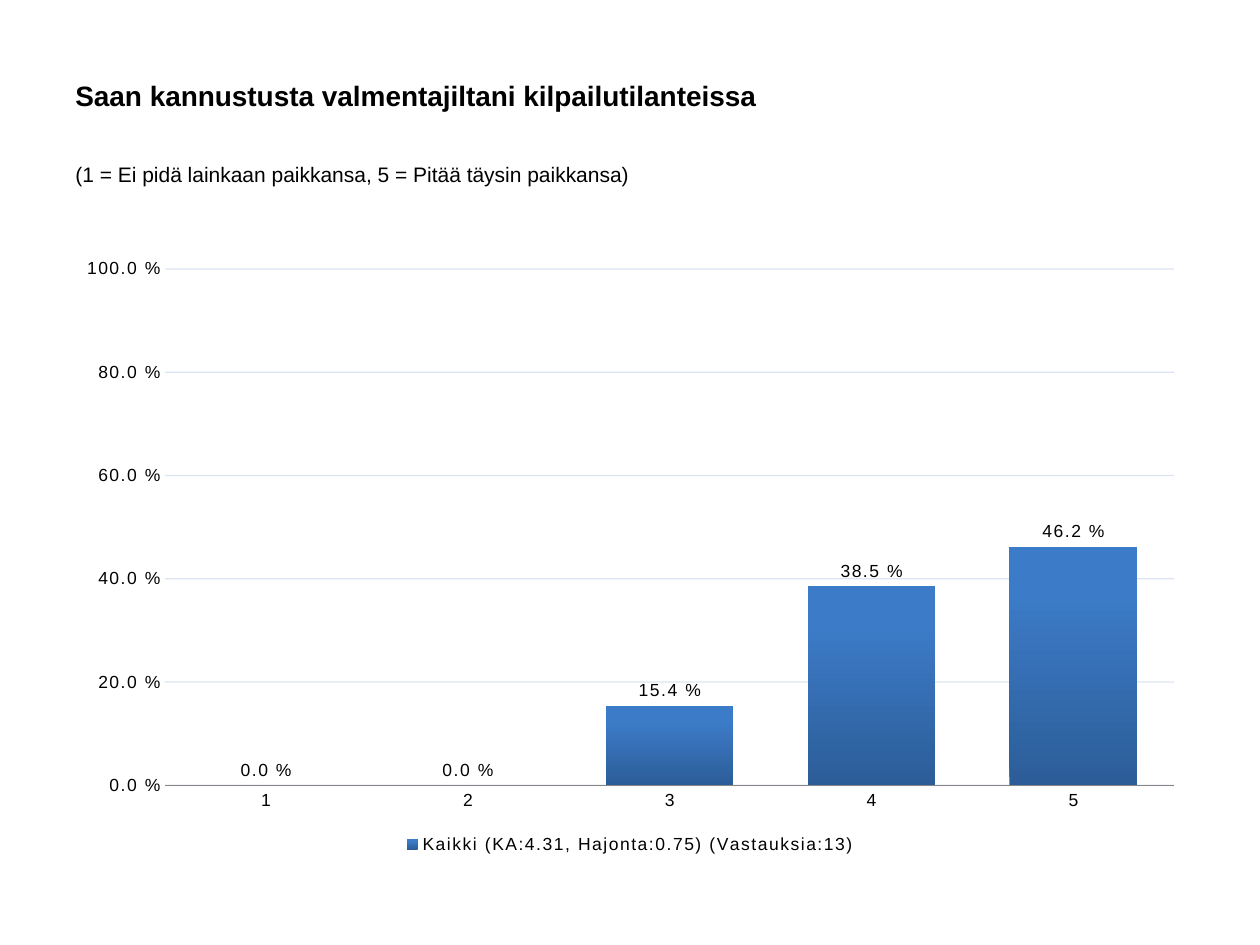
from lxml.etree import SubElement
from pptx import Presentation
from pptx.chart.data import CategoryChartData as ChartData
from pptx.dml.color import RGBColor
from pptx.enum.chart import XL_CHART_TYPE as ChartType
from pptx.enum.chart import XL_LABEL_POSITION as LabelPosition
from pptx.enum.chart import XL_LEGEND_POSITION as LegendPosition
from pptx.enum.chart import XL_TICK_MARK as TickMark
from pptx.enum.text import MSO_ANCHOR as Anchor
from pptx.oxml.ns import qn
from pptx.util import Inches, Pt

COLORS = {
    "text": "000000",
    "grid": "4F81BD",
    "axis": "868686",
    "bar_bottom": "2C5D98",
    "bar_top": "3C7BC7",
}
PERCENT = r"0.0\ %"
LEFT, WIDTH = 0.5, 9


def color(name):
    return RGBColor.from_string(COLORS[name])


class SlideBuilder:
    font_name = "Arial"

    def __init__(self, slide):
        self.slide = slide

    def style_font(self, font, size, bold=False):
        font.name = self.font_name
        font.size = Pt(size)
        font.bold = bold
        font.color.rgb = color("text")

    def text(self, content, top, height, size, bold=False, anchor=Anchor.TOP, space_before=0):
        shape = self.slide.shapes.add_textbox(Inches(LEFT), Inches(top), Inches(WIDTH), Inches(height))
        frame = shape.text_frame
        frame.word_wrap = True
        frame.vertical_anchor = anchor
        paragraph = frame.paragraphs[0]
        paragraph.space_before = Pt(space_before)
        run = paragraph.add_run()
        run.text = content
        self.style_font(run.font, size, bold)

    def column_chart(self, categories, name, values, top, height):
        data = ChartData(number_format=PERCENT)
        data.categories = categories
        data.add_series(name, values)
        chart = self.slide.shapes.add_chart(
            ChartType.COLUMN_CLUSTERED, Inches(LEFT), Inches(top), Inches(WIDTH), Inches(height), data
        ).chart
        chart.has_title = False
        self.style_font(chart.font, 10)
        chart.font.name = "Calibri"
        self.style_axes(chart)
        self.style_columns(chart.plots[0])
        chart.has_legend = True
        chart.legend.position = LegendPosition.BOTTOM
        chart.legend.include_in_layout = False
        self.style_font(chart.legend.font, 10)
        self.place_plot(chart, x=0.09, y=0.04, w=0.89, h=0.84)
        for properties in chart.element.iter(qn("a:defRPr")):
            properties.set("spc", "100")

    def style_axes(self, chart):
        for axis in (chart.category_axis, chart.value_axis):
            axis.major_tick_mark = axis.minor_tick_mark = TickMark.NONE
            self.style_font(axis.tick_labels.font, 10)
        chart.category_axis.format.line.color.rgb = color("axis")
        chart.category_axis.format.line.width = Pt(0.75)
        axis = chart.value_axis
        axis.minimum_scale, axis.maximum_scale, axis.major_unit = 0, 1, 0.2
        axis.tick_labels.number_format = PERCENT
        axis.tick_labels.number_format_is_linked = False
        axis.format.line.fill.background()
        axis.has_major_gridlines = True
        grid = axis.major_gridlines
        grid.format.line.color.rgb = color("grid")
        grid.format.line.width = Pt(0.75)
        for fill in chart.element.find(".//" + qn("c:majorGridlines")).iter(qn("a:srgbClr")):
            SubElement(fill, qn("a:alpha"), val="20000")

    def style_columns(self, plot):
        plot.gap_width = 58
        plot.vary_by_categories = False
        fill = plot.series[0].format.fill
        fill.gradient()
        fill.gradient_angle = 90
        for stop, name, position in zip(fill.gradient_stops, ("bar_bottom", "bar_top"), (0, 0.8)):
            stop.color.rgb = color(name)
            stop.position = position
        labels = plot.series[0].data_labels
        labels.show_value = True
        labels.number_format = PERCENT
        labels.number_format_is_linked = False
        labels.position = LabelPosition.OUTSIDE_END
        self.style_font(labels.font, 10)

    def place_plot(self, chart, **box):
        area = chart.element.find(".//" + qn("c:plotArea"))
        for old in area.findall(qn("c:layout")):
            area.remove(old)
        layout = SubElement(area, qn("c:layout"))
        area.insert(0, layout)
        manual = SubElement(layout, qn("c:manualLayout"))
        settings = {"layoutTarget": "inner", "xMode": "edge", "yMode": "edge", **box}
        for tag, value in settings.items():
            SubElement(manual, qn("c:" + tag), val=str(value))


def main():
    presentation = Presentation()
    presentation.slide_width, presentation.slide_height = Inches(10), Inches(7.5)
    builder = SlideBuilder(presentation.slides.add_slide(presentation.slide_layouts[6]))
    builder.text(
        "Saan kannustusta valmentajiltani kilpailutilanteissa",
        0.36, 0.79, 16, bold=True, anchor=Anchor.MIDDLE,
    )
    builder.text(
        "(1 = Ei pidä lainkaan paikkansa, 5 = Pitää täysin paikkansa)",
        1.23, 0.59, 12, space_before=2.4,
    )
    builder.column_chart(
        ["1", "2", "3", "4", "5"],
        "Kaikki (KA:4.31, Hajonta:0.75) (Vastauksia:13)",
        [0, 0, 0.154, 0.385, 0.462],
        1.94, 4.88,
    )
    presentation.save("out.pptx")


if __name__ == "__main__":
    main()
